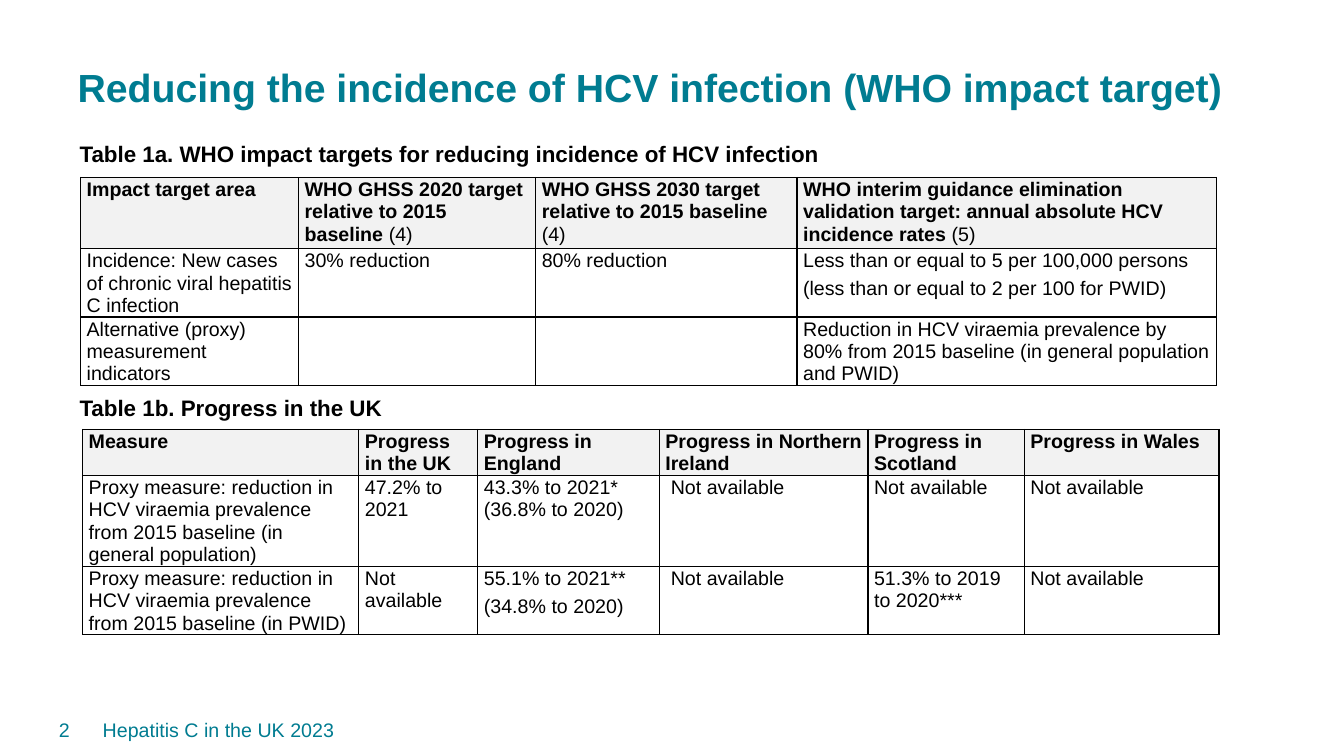
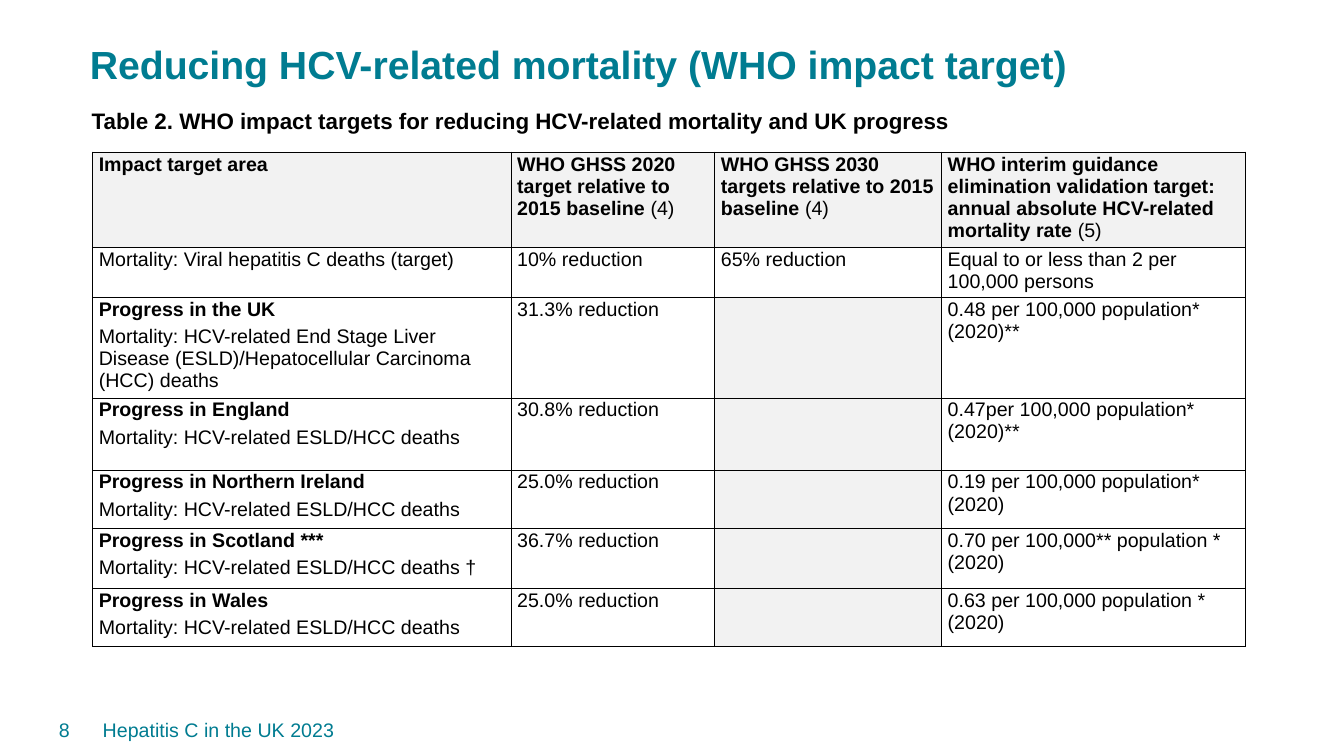
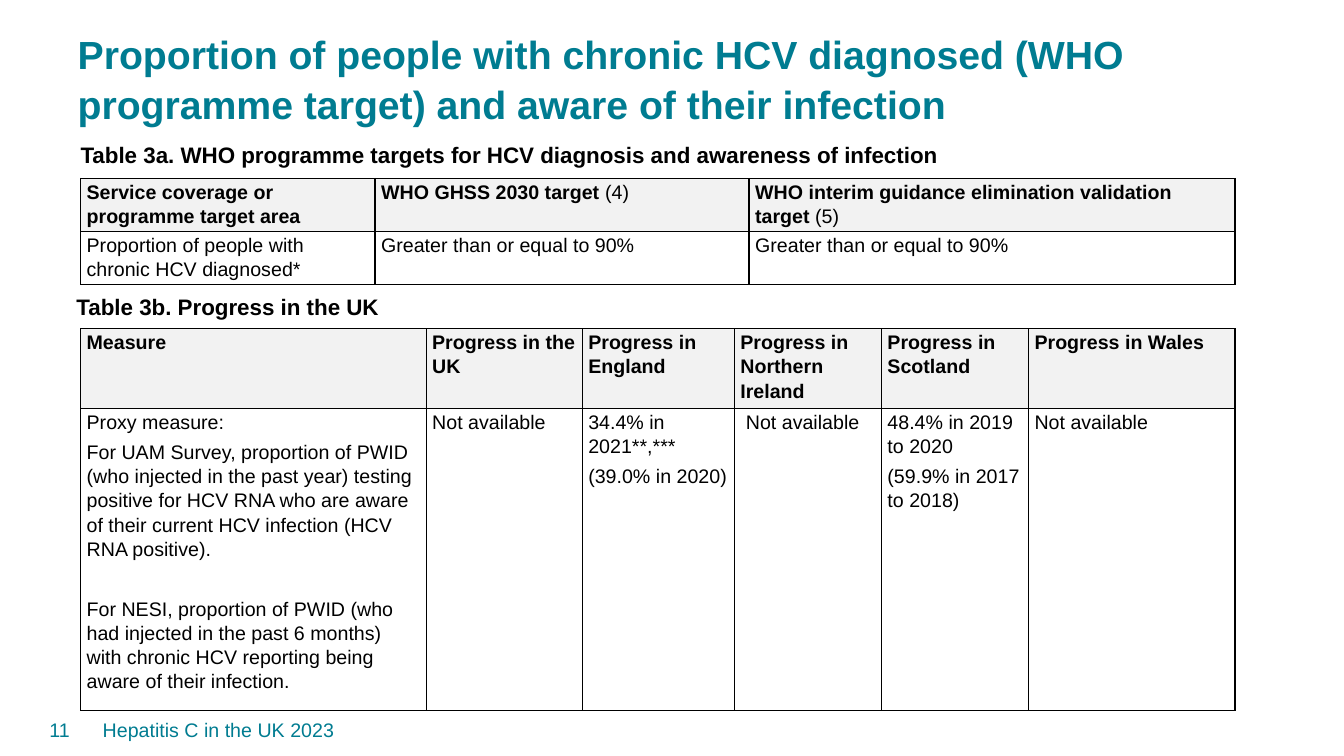
import pptx
import pptx.util
import pptx.dml.color
import pptx.enum.text
import pptx.oxml

COLOURS = {"teal": "007C91", "ink": "000000", "shade": "F2F2F2", "paper": "FFFFFF"}
FONT = "Arial"
FOOTER = "Hepatitis C in the UK 2023"
ANCHOR = pptx.enum.text.MSO_ANCHOR
ALIGN = pptx.enum.text.PP_ALIGN
BORDER = (
    '<a:{side} xmlns:a="http://schemas.openxmlformats.org/drawingml/2006/main" w="12700">'
    '<a:solidFill><a:srgbClr val="{colour}"/></a:solidFill></a:{side}>'
)


def rgb(name):
    return pptx.dml.color.RGBColor.from_string(COLOURS[name])


def shares(total, weights):
    """Split a length in proportion to the weights."""
    return [round(total * weight / sum(weights)) for weight in weights]


class Report:
    """Deck style and current page; every place is in percent of the page."""

    def __init__(self):
        self.deck = pptx.Presentation()
        self.deck.slide_width = pptx.util.Inches(13.33)
        self.deck.slide_height = pptx.util.Inches(7.5)
        self.page = None

    def place(self, left, top, width, height):
        across, down = self.deck.slide_width / 100, self.deck.slide_height / 100
        return round(left * across), round(top * down), round(width * across), round(height * down)

    def style(self, para, size, colour="ink", bold=False, spacing=None):
        para.font.name = FONT
        para.font.size = pptx.util.Pt(size)
        para.font.bold = bold
        para.font.color.rgb = rgb(colour)
        if spacing:
            para.line_spacing = spacing

    def new_page(self, title, place, number, spacing=0.9):
        """Start a page with its title, footer and page number."""
        self.page = self.deck.slides.add_slide(self.deck.slide_layouts[5])
        box = self.page.shapes.title
        box.left, box.top, box.width, box.height = self.place(*place)
        frame = box.text_frame
        frame.text = title
        frame.word_wrap = True
        frame.auto_size = pptx.enum.text.MSO_AUTO_SIZE.NONE
        frame.vertical_anchor = ANCHOR.TOP
        frame.margin_top = pptx.util.Inches(0.08)
        para = frame.paragraphs[0]
        para.alignment = ALIGN.LEFT
        self.style(para, 28, "teal", True, spacing)
        self.text(FOOTER, (6.9, 93.87, 82.07, 5.33), 14, "teal", anchor=ANCHOR.MIDDLE)
        self.text(str(number), (1.05, 93.87, 4.88, 5.33), 14, "teal",
                  anchor=ANCHOR.MIDDLE, align=ALIGN.RIGHT)

    def text(self, words, place, size, colour="ink", bold=False, spacing=None,
             anchor=ANCHOR.TOP, align=ALIGN.LEFT):
        frame = self.page.shapes.add_textbox(*self.place(*place)).text_frame
        frame.word_wrap = True
        frame.vertical_anchor = anchor
        para = frame.paragraphs[0]
        para.text = words
        para.alignment = align
        self.style(para, size, colour, bold, spacing)

    def caption(self, words, place, spacing=None):
        self.text(words, place, 16, bold=True, spacing=spacing)

    def table(self, place, columns, heights, rows, spacing, blank="paper"):
        """Add a table; columns and heights are weights, blank fills empty cells."""
        left, top, width, height = self.place(*place)
        table = self.page.shapes.add_table(
            len(rows), len(columns), left, top, width, height).table
        table.horz_banding = False
        for column, size in zip(table.columns, shares(width, columns)):
            column.width = size
        for row, size in zip(table.rows, shares(height, heights)):
            row.height = size
        for r, row in enumerate(rows):
            for c, words in enumerate(row):
                if r == 0 and "|" not in words:
                    words += "|"
                fill = "shade" if r == 0 else "paper" if words else blank
                self.fill_cell(table.cell(r, c), words, fill, spacing)

    def fill_cell(self, cell, words, fill, spacing):
        """Write a cell: text before a bar is bold, an empty line widens the gap."""
        for side in ("lnL", "lnR", "lnT", "lnB"):
            line = BORDER.format(side=side, colour=COLOURS["ink"])
            cell._tc.get_or_add_tcPr().append(pptx.oxml.parse_xml(line))
        cell.fill.solid()
        cell.fill.fore_color.rgb = rgb(fill)
        cell.margin_left = cell.margin_right = pptx.util.Inches(0.06)
        cell.margin_top, cell.margin_bottom = pptx.util.Inches(0.01), 0
        if not words:
            return
        frame = cell.text_frame
        before = 0
        for line in words.split("\n"):
            if not line:
                before = 23.5
                continue
            para = frame.add_paragraph() if frame.text else frame.paragraphs[0]
            strong, _, plain = line.rpartition("|")
            self.style(para, 14, bold=bool(strong), spacing=spacing)
            para.space_before = pptx.util.Pt(before)
            para.space_after = pptx.util.Pt(2)
            for part in filter(None, (strong, plain)):
                span = para.add_run()
                span.text = part
                if strong and part is plain:
                    span.font.bold = False
            before = 2


NATIONS = ["Progress in the UK", "Progress in England", "Progress in Northern Ireland",
           "Progress in Scotland", "Progress in Wales"]
NONE = "Not available"
DEATHS = "\nMortality: HCV-related ESLD/HCC deaths"


def incidence(report):
    report.new_page("Reducing the incidence of HCV infection (WHO impact target)",
                    (5.03, 8, 91.3, 7.07), 2)
    report.caption("Table 1a. WHO impact targets for reducing incidence of HCV infection",
                   (5.18, 17.87, 65.27, 4.93))
    spacing = pptx.util.Pt(16)
    report.table((6, 23.47, 84.55, 27.5), [2.16, 2.35, 2.59, 4.16], [71, 68, 68], [
        ["Impact target area",
         "WHO GHSS 2020 target relative to 2015 baseline |(4)",
         "WHO GHSS 2030 target relative to 2015 baseline |(4)",
         "WHO interim guidance elimination validation target: "
         "annual absolute HCV incidence rates |(5)"],
        ["Incidence: New cases of chronic viral hepatitis C infection",
         "30% reduction", "80% reduction",
         "Less than or equal to 5 per 100,000 persons\n"
         "(less than or equal to 2 per 100 for PWID)"],
        ["Alternative (proxy) measurement indicators", "", "",
         "Reduction in HCV viraemia prevalence by 80% from 2015 baseline "
         "(in general population and PWID)"],
    ], spacing)
    report.caption("Table 1b. Progress in the UK", (5.18, 52.4, 48.3, 4.13), pptx.util.Pt(14))
    proxy = "Proxy measure: reduction in HCV viraemia prevalence from 2015 baseline "
    report.table((6.15, 56.8, 84.55, 27), [2.74, 1.18, 1.8, 2.07, 1.55, 1.93], [45, 91, 68], [
        ["Measure", *NATIONS],
        [proxy + "(in general population)", "47.2% to 2021",
         "43.3% to 2021* (36.8% to 2020)", " " + NONE, NONE, NONE],
        [proxy + "(in PWID)", NONE, "55.1% to 2021**\n(34.8% to 2020)",
         " " + NONE, "51.3% to 2019 to 2020***", NONE],
    ], spacing)


def mortality(report):
    report.new_page("Reducing HCV-related mortality (WHO impact target)",
                    (5.93, 4.93, 75.32, 6.93), 8)
    report.caption("Table 2. WHO impact targets for reducing HCV-related mortality "
                   "and UK progress", (6.08, 13.47, 67, 4.93))
    uk, england, northern_ireland, scotland, wales = NATIONS
    report.table((6.9, 20.13, 85.75, 64.2), [4.15, 2.02, 2.25, 3.01],
                 [92, 50, 95, 72, 58, 60, 58], [
        ["Impact target area",
         "WHO GHSS 2020 target relative to 2015 baseline |(4)",
         "WHO GHSS 2030 targets relative to 2015 baseline |(4)",
         "WHO interim guidance elimination validation target: "
         "annual absolute HCV-related mortality rate |(5)"],
        ["Mortality: Viral hepatitis C deaths (target)", "10% reduction", "65% reduction",
         "Equal to or less than 2 per 100,000 persons"],
        [uk + "|\nMortality: HCV-related End Stage Liver Disease (ESLD)/"
         "Hepatocellular Carcinoma (HCC) deaths",
         "31.3% reduction", "", "0.48 per 100,000 population* (2020)**"],
        [england + "|" + DEATHS, "30.8% reduction", "",
         "0.47per 100,000 population* (2020)**"],
        [northern_ireland + "|" + DEATHS, "25.0% reduction", "",
         "0.19 per 100,000 population* (2020)"],
        [scotland + " ***|" + DEATHS + " †", "36.7% reduction", "",
         "0.70 per 100,000** population * (2020)"],
        [wales + "|" + DEATHS, "25.0% reduction", "",
         "0.63 per 100,000 population * (2020)"],
    ], 1.0, blank="shade")


def diagnosis(report):
    report.new_page("Proportion of people with chronic HCV diagnosed (WHO programme target) "
                    "and aware of their infection", (5.03, 2.67, 91.3, 14.13), 11, 1.05)
    tight = pptx.util.Pt(14)
    report.caption("Table 3a. WHO programme targets for HCV diagnosis and awareness of infection",
                   (5.25, 18.93, 81.1, 4), tight)
    target = "Greater than or equal to 90%"
    report.table((6, 23.6, 85.9, 13.87), [2.92, 3.71, 4.82], [53, 52], [
        ["Service coverage or programme target area", "WHO GHSS 2030 target |(4)",
         "WHO interim guidance elimination validation target |(5)"],
        ["Proportion of people with chronic HCV diagnosed*", target, target],
    ], 1.1)
    report.caption("Table 3b. Progress in the UK", (4.95, 39.07, 26.56, 4), tight)
    report.table((6, 43.47, 85.9, 50.5), [3.43, 1.55, 1.51, 1.46, 1.46, 2.05], [80, 302], [
        ["Measure", *NATIONS],
        ["Proxy measure:\n"
         "For UAM Survey, proportion of PWID (who injected in the past year) testing positive "
         "for HCV RNA who are aware of their current HCV infection (HCV RNA positive).\n\n"
         "For NESI, proportion of PWID (who had injected in the past 6 months) with chronic HCV "
         "reporting being aware of their infection.",
         NONE, "34.4% in 2021**,***\n(39.0% in 2020)", " " + NONE,
         "48.4% in 2019 to 2020\n(59.9% in 2017 to 2018)", NONE],
    ], 1.1)


def main():
    report = Report()
    for build in (incidence, mortality, diagnosis):
        build(report)
    report.deck.save("out.pptx")


if __name__ == "__main__":
    main()
